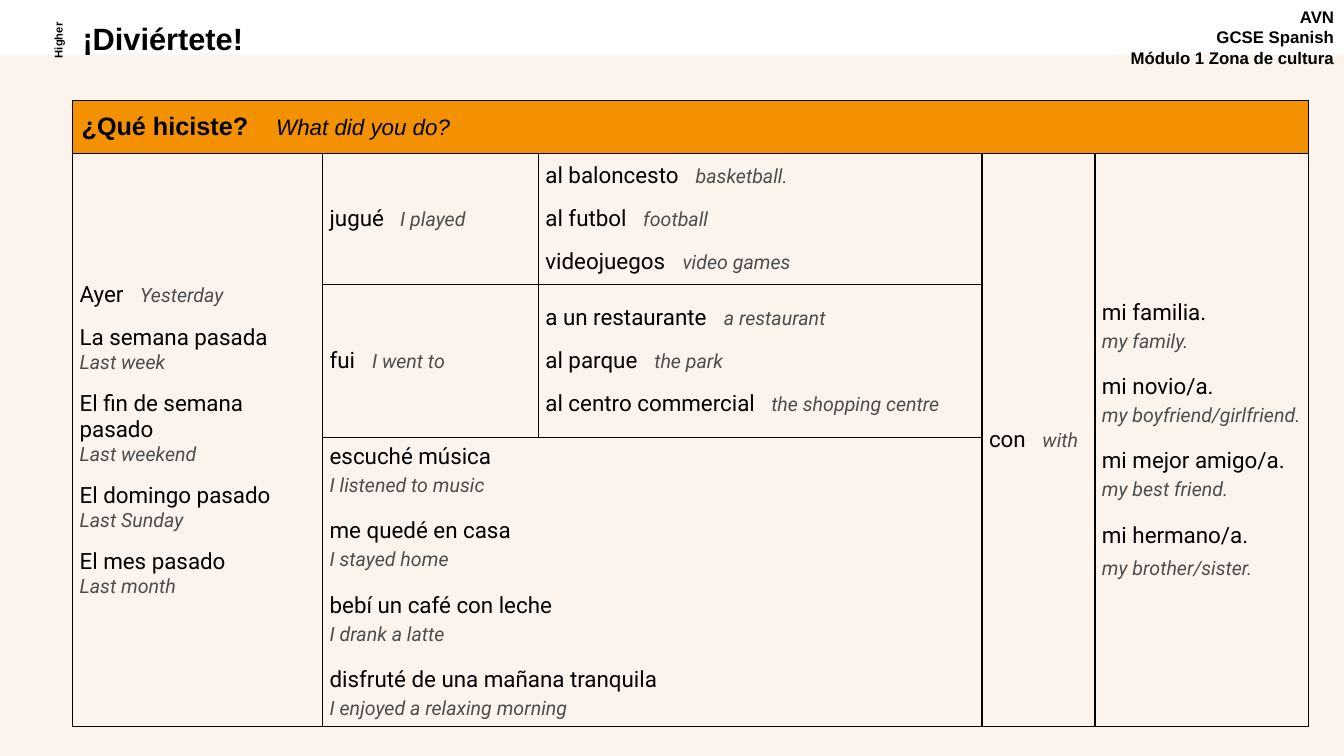
from dataclasses import dataclass
from itertools import product

from lxml import etree
from pptx import Presentation
from pptx.dml.color import RGBColor
from pptx.enum.shapes import MSO_SHAPE
from pptx.enum.text import MSO_ANCHOR, PP_ALIGN
from pptx.oxml.ns import qn
from pptx.util import Inches, Pt

RECTANGLE = MSO_SHAPE.RECTANGLE
MIDDLE = MSO_ANCHOR.MIDDLE
LEFT, CENTER, RIGHT = PP_ALIGN.LEFT, PP_ALIGN.CENTER, PP_ALIGN.RIGHT
SIDES = "LRTB"


@dataclass(frozen=True)
class Theme:
    black: str = "000000"
    grey: str = "4D4D4C"
    cream: str = "FDF3ED"
    orange: str = "F39100"
    heading_font: str = "Arial"
    body_font: str = "Roboto"
    title_size: int = 22
    question_size: int = 18
    word_size: int = 16
    meaning_size: int = 14
    course_size: int = 12
    tier_size: int = 8
    thin: float = 0.75
    thick: float = 1


THEME = Theme()
HEADING = dict(font=THEME.heading_font, bold=True)
SPANISH = dict(size=THEME.word_size)
ENGLISH = dict(size=THEME.meaning_size, color=THEME.grey, italic=True)
QUESTION = dict(HEADING, size=THEME.question_size)
QUESTION_MEANING = dict(size=THEME.word_size, font=THEME.heading_font, italic=True)


def add_run(paragraph, text, *, size, font=THEME.body_font, color=THEME.black,
            bold=False, italic=False):
    run = paragraph.add_run()
    run.text = text
    run.font.name, run.font.size = font, Pt(size)
    run.font.bold, run.font.italic = bold, italic
    run.font.color.rgb = RGBColor.from_string(color)


def line(*runs, before=0, after=0, tab=None, align=LEFT, spacing=1.0):
    """Describe one paragraph; runs are (text, format) pairs."""
    return dict(runs=runs, before=before, after=after, tab=tab,
                align=align, spacing=spacing)


def beside(spanish, english, tab, after=12):
    """Translation on the same line, starting at the tab stop."""
    return [line((spanish + "\t", SPANISH), (english, ENGLISH), tab=tab, after=after)]


def stacked(pairs, gap=3):
    """Translation under each phrase, with a wider gap after the pair."""
    lines = []
    for spanish, english in pairs:
        lines.append(line((spanish, SPANISH), before=gap if lines else 0, after=gap))
        lines.append(line((english, ENGLISH), after=12))
    return lines


def write(frame, lines):
    for index, item in enumerate(lines):
        paragraph = frame.add_paragraph() if index else frame.paragraphs[0]
        paragraph.alignment = item["align"]
        paragraph.line_spacing = item["spacing"]
        paragraph.space_before = Pt(item["before"])
        paragraph.space_after = Pt(item["after"])
        if item["tab"]:
            tabs = etree.SubElement(paragraph._p.get_or_add_pPr(), qn("a:tabLst"))
            etree.SubElement(tabs, qn("a:tab"), pos=str(Inches(item["tab"])), algn="l")
        for text, style in item["runs"]:
            add_run(paragraph, text, **style)


class SlideBuilder:
    def __init__(self, slide, theme):
        self.slide = slide
        self.theme = theme

    def rectangle(self, left, top, width, height, color):
        shape = self.slide.shapes.add_shape(
            RECTANGLE, Inches(left), Inches(top), Inches(width), Inches(height))
        shape.shadow.inherit = False
        shape.fill.solid()
        shape.fill.fore_color.rgb = RGBColor.from_string(color)
        shape.line.fill.background()

    def text(self, left, top, width, height, lines, rotation=0):
        box = self.slide.shapes.add_textbox(
            Inches(left), Inches(top), Inches(width), Inches(height))
        box.rotation = rotation
        box.text_frame.word_wrap = True
        write(box.text_frame, lines)

    def table(self, left, top, columns, rows):
        frame = self.slide.shapes.add_table(
            len(rows), len(columns), Inches(left), Inches(top),
            Inches(sum(columns)), Inches(sum(rows)))
        table = frame.table
        table.first_row = table.horz_banding = False
        for column, width in zip(table.columns, columns):
            column.width = Inches(width)
        for row, height in zip(table.rows, rows):
            row.height = Inches(height)
        return table

    def border(self, cell, side, width):
        properties = cell._tc.get_or_add_tcPr()
        edge = etree.SubElement(properties, qn("a:ln" + side), w=str(Pt(width)))
        fill = etree.SubElement(edge, qn("a:solidFill"))
        etree.SubElement(fill, qn("a:srgbClr"), val=self.theme.black)

    def cell(self, table, row, column, lines, span=(1, 1), thick="",
             fill=None, margins=(0.07, 0)):
        """Fill a cell or merged block; thick names the sides with the heavier line."""
        origin = table.cell(row, column)
        height, width = span
        if span != (1, 1):
            origin.merge(table.cell(row + height - 1, column + width - 1))
        for down, across in product(range(height), range(width)):
            part = table.cell(row + down, column + across)
            outer = dict(L=across == 0, R=across == width - 1,
                         T=down == 0, B=down == height - 1)
            for side in SIDES:
                if part is origin or (down, across) == (0, 0) or outer[side]:
                    self.border(part, side,
                                self.theme.thick if side in thick else self.theme.thin)
            if fill:
                part.fill.solid()
                part.fill.fore_color.rgb = RGBColor.from_string(fill)
            else:
                part.fill.background()
        origin.vertical_anchor = MIDDLE
        origin.margin_left = origin.margin_right = Inches(margins[0])
        origin.margin_top = origin.margin_bottom = Inches(margins[1])
        write(origin.text_frame, lines)


def main():
    presentation = Presentation()
    presentation.slide_width, presentation.slide_height = Inches(13.33), Inches(7.5)
    slide = presentation.slides.add_slide(presentation.slide_layouts[6])
    builder = SlideBuilder(slide, THEME)

    builder.rectangle(0, 0.54, 13.33, 6.96, THEME.cream)
    course = dict(HEADING, size=THEME.course_size)
    builder.text(10.44, 0.02, 2.89, 0.77, [
        line((text, course), align=RIGHT)
        for text in ("AVN", "GCSE Spanish", "Módulo 1 Zona de cultura")])
    builder.text(0.72, 0.19, 6.88, 0.43, [
        line(("¡Diviértete!", dict(HEADING, size=THEME.title_size)), spacing=0.9)])
    builder.text(0.18, 0.29, 0.78, 0.22, [
        line(("Higher", dict(HEADING, size=THEME.tier_size)), align=CENTER)],
        rotation=270)

    question = [line(("¿Qué hiciste?\t", QUESTION),
                     ("What did you do?", QUESTION_MEANING), tab=1.93)]
    times = beside("Ayer", "Yesterday", 0.6) + stacked([
        ("La semana pasada", "Last week"),
        ("El fin de semana pasado", "Last weekend"),
        ("El domingo pasado", "Last Sunday"),
        ("El mes pasado", "Last month")], gap=0)
    games = (beside("al baloncesto", "basketball.", 1.49)
             + beside("al futbol", "football", 0.97)
             + beside("videojuegos", "video games", 1.36))
    places = (beside("a un restaurante", "a restaurant", 1.77)
              + beside("al parque", "the park", 1.08)
              + beside("al centro commercial", "the shopping centre", 2.24))
    people = stacked([
        ("mi familia.", "my family."),
        ("mi novio/a.", "my boyfriend/girlfriend."),
        ("mi mejor amigo/a.", "my best friend."),
        ("mi hermano/a.", "my brother/sister.")])
    people[-1].update(before=3, after=3)
    activities = stacked([
        ("escuché música", "I listened to music"),
        ("me quedé en casa", "I stayed home"),
        ("bebí un café con leche", "I drank a latte"),
        ("disfruté de una mañana tranquila", "I enjoyed a relaxing morning")])

    table = builder.table(0.72, 1, [2.48, 2.14, 4.4, 1.12, 2.12], [0.52, 1.3, 1.52, 2.87])
    builder.cell(table, 0, 0, question, span=(1, 5), fill=THEME.orange,
                 margins=(0.09, 0.04))
    builder.cell(table, 1, 0, times, span=(3, 1))
    builder.cell(table, 1, 1, beside("jugué", "I played", 0.7, after=3), thick="RB")
    builder.cell(table, 1, 2, games, thick="LRB")
    builder.cell(table, 1, 3, beside("con", "with", 0.53, after=3), span=(3, 1), thick="LR")
    builder.cell(table, 1, 4, people, span=(3, 1), thick="LR")
    builder.cell(table, 2, 1, beside("fui", "I went to", 0.42, after=3), thick="TRB")
    builder.cell(table, 2, 2, places, thick="LRTB")
    builder.cell(table, 3, 1, activities, span=(1, 2), thick="TR")

    presentation.save("out.pptx")


if __name__ == "__main__":
    main()
